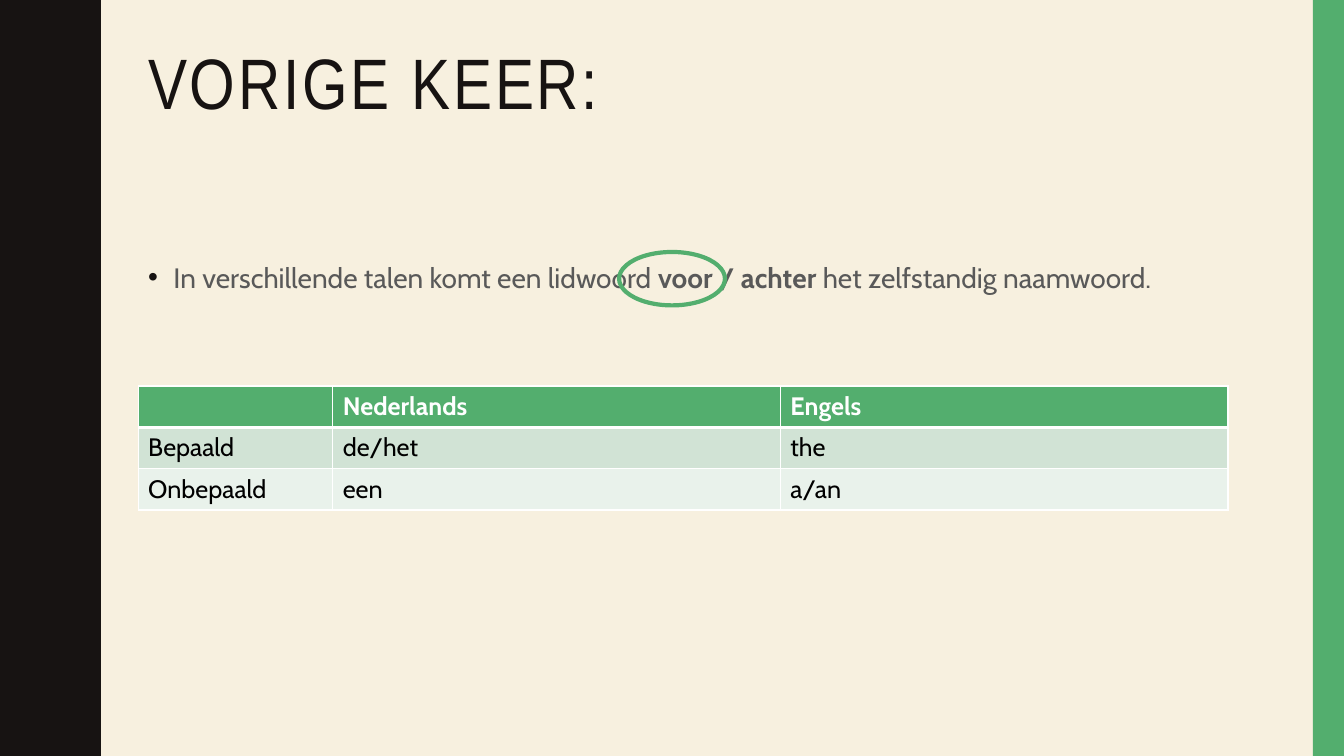
from lxml.etree import SubElement
from pptx import Presentation
from pptx.dml.color import RGBColor
from pptx.enum.shapes import MSO_SHAPE
from pptx.enum.text import MSO_ANCHOR, MSO_AUTO_SIZE, PP_ALIGN
from pptx.oxml.ns import qn
from pptx.util import Inches, Pt

COLORS = {
    "cream": "F7F0DF", "ink": "171312", "green": "53AE6E", "gray": "595959",
    "white": "FFFFFF", "black": "000000", "mint": "D1E3D5", "pale": "E9F2EB",
}
SLIDE_WIDTH, SLIDE_HEIGHT = 13.33, 7.5

# Half a wave of the left edge: x, and y from the start of the wave
WAVE_LENGTH = 1.5
HALF_WAVE = [
    (0.78, 0), (0.78, 0.07), (0.79, 0.14), (0.8, 0.2), (0.81, 0.25),
    (0.83, 0.29), (0.89, 0.42), (0.93, 0.5), (0.95, 0.55), (0.96, 0.61),
    (0.96, 0.68), (0.97, 0.75),
]

TABLE_TOP, ROW_HEIGHT = 3.83, 0.41
ROW_FILLS = ["green", "mint", "pale"]
THIN, THICK = 0.96, 3


def rgb(name):
    return RGBColor.from_string(COLORS[name])


def format_font(font, color, **values):
    font.color.rgb = rgb(color)
    for name, value in values.items():
        setattr(font, name, value)


def paint(shape, color):
    shape.shadow.inherit = False
    shape.fill.solid()
    shape.fill.fore_color.rgb = rgb(color)
    shape.line.fill.background()


def place(placeholder, left, top, width, height):
    bounds = {"left": left, "top": top, "width": width, "height": height}
    for name, value in bounds.items():
        setattr(placeholder, name, Inches(value))
    frame = placeholder.text_frame
    frame.auto_size = MSO_AUTO_SIZE.NONE
    frame.vertical_anchor = MSO_ANCHOR.TOP
    return frame.paragraphs[0]


def add_wavy_edge(slide):
    wave = HALF_WAVE + [(x, WAVE_LENGTH - y) for x, y in HALF_WAVE[-2::-1]]
    count = round(SLIDE_HEIGHT / WAVE_LENGTH)
    edge = [(x, y + i * WAVE_LENGTH) for i in range(count) for x, y in wave]
    outline = slide.shapes.build_freeform(0, 0, scale=Inches(1))
    outline.add_line_segments(edge + [(0, SLIDE_HEIGHT)], close=True)
    paint(outline.convert_to_shape(), "ink")


def add_side_bar(slide):
    bar = slide.shapes.add_shape(
        MSO_SHAPE.RECTANGLE, Inches(13.02), 0, Inches(0.31), Inches(SLIDE_HEIGHT))
    paint(bar, "green")


def add_title(slide, text):
    heading = place(slide.shapes.title, 1.37, 0.42, 11.13, 1.63)
    heading.alignment = PP_ALIGN.LEFT
    heading.line_spacing = 0.9
    run = heading.add_run()
    run.text = text
    format_font(run.font, "ink", name="Arial Narrow", size=Pt(51))
    run.font._element.set("spc", "200")


def add_bullet(slide, pieces):
    statement = place(slide.placeholders[1], 1.37, 2.5, 11.13, 3.93)
    statement.line_spacing = 1.1
    statement.space_before = Pt(7)
    properties = statement._p.get_or_add_pPr()
    properties.set("marL", str(Inches(0.25)))
    properties.set("indent", str(Inches(-0.25)))
    bullet_color = SubElement(properties, qn("a:buClr"))
    SubElement(bullet_color, qn("a:srgbClr"), val=COLORS["ink"])
    SubElement(properties, qn("a:buFont"), typeface="Arial")
    SubElement(properties, qn("a:buChar"), char="•")
    for text, bold in pieces:
        run = statement.add_run()
        run.text = text
        format_font(run.font, "gray", name="Cabin", size=Pt(20), bold=bold)


def add_answer_ring(slide):
    ring = slide.shapes.add_shape(
        MSO_SHAPE.OVAL, Inches(6.14), Inches(2.5), Inches(1.05), Inches(0.53))
    ring.shadow.inherit = False
    ring.fill.background()
    ring.line.color.rgb = rgb("green")
    ring.line.width = Pt(3)


def add_borders(cell, row):
    widths = {
        "a:lnL": THIN, "a:lnR": THIN,
        "a:lnT": THICK if row == 1 else THIN,
        "a:lnB": THICK if row == 0 else THIN,
    }
    properties = cell._tc.get_or_add_tcPr()
    for side, width in widths.items():
        border = SubElement(properties, qn(side), w=str(Pt(width)))
        fill = SubElement(border, qn("a:solidFill"))
        SubElement(fill, qn("a:srgbClr"), val=COLORS["white"])


def add_article_table(slide, left, column_width, rows):
    columns = len(rows[0])
    table = slide.shapes.add_table(
        len(rows), columns, Inches(left), Inches(TABLE_TOP),
        Inches(column_width * columns), Inches(ROW_HEIGHT * len(rows))).table
    for r, texts in enumerate(rows):
        table.rows[r].height = Inches(ROW_HEIGHT)
        for c, text in enumerate(texts):
            cell = table.cell(r, c)
            add_borders(cell, r)
            cell.fill.solid()
            cell.fill.fore_color.rgb = rgb(ROW_FILLS[r])
            cell.text = text
            format_font(cell.text_frame.paragraphs[0].font,
                        "black" if r else "white",
                        name="Cabin", size=Pt(18), bold=r == 0)


def main():
    deck = Presentation()
    deck.slide_width = Inches(SLIDE_WIDTH)
    deck.slide_height = Inches(SLIDE_HEIGHT)
    slide = deck.slides.add_slide(deck.slide_layouts[1])

    # Background and edges
    slide.background.fill.solid()
    slide.background.fill.fore_color.rgb = rgb("cream")
    add_wavy_edge(slide)
    add_side_bar(slide)

    # Statement with the right answer ringed
    add_title(slide, "VORIGE KEER:")
    add_bullet(slide, [
        ("In verschillende talen komt een lidwoord ", False),
        ("voor / achter ", True),
        ("het zelfstandig naamwoord.", False),
    ])
    add_answer_ring(slide)

    # Row labels, then the articles per language
    add_article_table(slide, 1.37, 1.94, [[""], ["Bepaald"], ["Onbepaald"]])
    add_article_table(slide, 3.3, 4.44, [
        ["Nederlands", "Engels"],
        ["de/het", "the"],
        ["een", "a/an"],
    ])

    deck.save("out.pptx")


if __name__ == "__main__":
    main()
